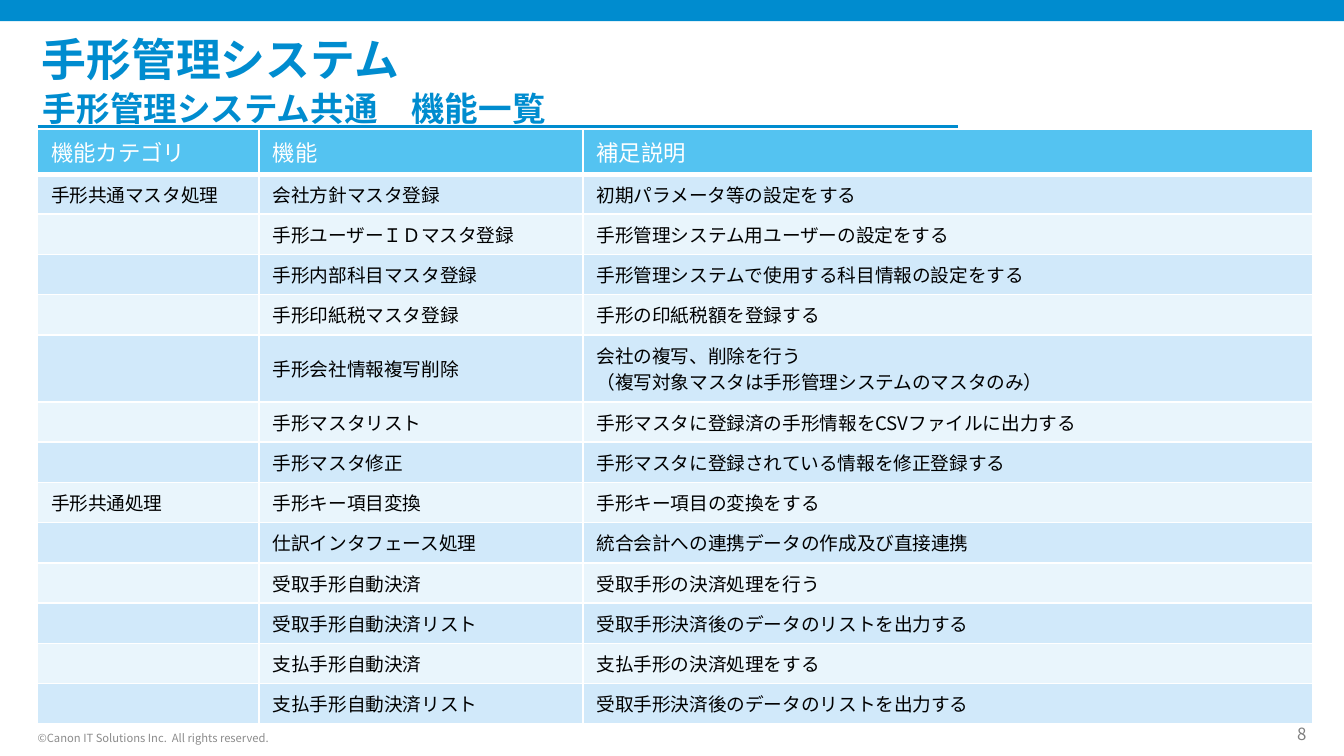
from lxml.etree import SubElement
from pptx import Presentation
from pptx.dml.color import RGBColor
from pptx.enum.shapes import MSO_CONNECTOR as Link, MSO_SHAPE as Shape
from pptx.enum.text import MSO_ANCHOR as Anchor, PP_ALIGN as Align
from pptx.oxml.ns import qn
from pptx.util import Cm, Pt

FONT = "Noto Sans CJK JP"
BLUE = RGBColor(0x00, 0x8C, 0xCF)
SKY = RGBColor(0x54, 0xC3, 0xF1)
PALE = RGBColor(0xD1, 0xE9, 0xFA)
FAINT = RGBColor(0xE9, 0xF5, 0xFC)
GRAY = RGBColor(0x80, 0x80, 0x80)
SILVER = RGBColor(0x8C, 0x8C, 0x8C)
WHITE = RGBColor(0xFF, 0xFF, 0xFF)
BLACK = RGBColor(0x00, 0x00, 0x00)

# text, left, top, width, height, size, colour, bold, anchor, align
LABELS = [
    ("手形管理システム", 0.79, 0.61, 19.99, 0.99, 24, BLUE, True, Anchor.MIDDLE, Align.LEFT),
    ("手形管理システム共通　機能一覧", 0.81, 1.6, 16.49, 0.89, 18, BLUE, True, Anchor.MIDDLE, Align.LEFT),
    ("©Canon IT Solutions Inc.  All rights reserved.", 0.71, 13.69, 5.99, 0.38, 6, SILVER, False,
     Anchor.BOTTOM, Align.LEFT),
    ("8", 23.7, 13.69, 0.99, 0.38, 9, GRAY, False, Anchor.BOTTOM, Align.RIGHT),
]
HEAD = ("機能カテゴリ", "機能", "補足説明")
GROUPS = [
    ("手形共通マスタ処理", [
        ("会社方針マスタ登録", "初期パラメータ等の設定をする"),
        ("手形ユーザーＩＤマスタ登録", "手形管理システム用ユーザーの設定をする"),
        ("手形内部科目マスタ登録", "手形管理システムで使用する科目情報の設定をする"),
        ("手形印紙税マスタ登録", "手形の印紙税額を登録する"),
        ("手形会社情報複写削除", "会社の複写、削除を行う\n（複写対象マスタは手形管理システムのマスタのみ）"),
        ("手形マスタリスト", "手形マスタに登録済の手形情報をCSVファイルに出力する"),
        ("手形マスタ修正", "手形マスタに登録されている情報を修正登録する"),
    ]),
    ("手形共通処理", [
        ("手形キー項目変換", "手形キー項目の変換をする"),
        ("仕訳インタフェース処理", "統合会計への連携データの作成及び直接連携"),
        ("受取手形自動決済", "受取手形の決済処理を行う"),
        ("受取手形自動決済リスト", "受取手形決済後のデータのリストを出力する"),
        ("支払手形自動決済", "支払手形の決済処理をする"),
        ("支払手形自動決済リスト", "受取手形決済後のデータのリストを出力する"),
    ]),
]
COLS = (4.19, 6.12, 13.79)
HEAD_H, ROW_H, TALL_H = 0.85, 0.76, 1.27


def write(frame, text, size, color, bold=False, align=Align.LEFT):
    frame.text = text
    for para in frame.paragraphs:
        para.alignment = align
        for run in para.runs:
            font = run.font
            font.name, font.size, font.bold = FONT, Pt(size), bold
            font.color.rgb = color
            SubElement(font._element, qn("a:ea"), typeface=FONT)
        if not para.runs:  # keeps an empty row from growing
            SubElement(para._p, qn("a:endParaRPr"), sz=str(size * 100))


def edge(cell, bottom):
    """Draw white borders, with the given bottom width in points."""
    props = cell._tc.get_or_add_tcPr()
    for side, width in zip("LRTB", (1, 1, 1, bottom)):
        line = SubElement(props, qn("a:ln" + side), w=str(Pt(width)))
        fill = SubElement(line, qn("a:solidFill"))
        SubElement(fill, qn("a:srgbClr"), val=str(WHITE))


def add_label(slide, text, left, top, width, height, size, color, bold, anchor, align):
    box = slide.shapes.add_textbox(Cm(left), Cm(top), Cm(width), Cm(height))
    frame = box.text_frame
    frame.word_wrap = True
    frame.margin_left = frame.margin_right = frame.margin_top = frame.margin_bottom = 0
    frame.vertical_anchor = anchor
    write(frame, text, size, color, bold, align)


def add_list(slide):
    rows = [HEAD]
    for group, items in GROUPS:
        rows += [(group if i == 0 else "", *item) for i, item in enumerate(items)]
    heights = [HEAD_H] + [TALL_H if "\n" in row[2] else ROW_H for row in rows[1:]]
    table = slide.shapes.add_table(len(rows), len(COLS), Cm(0.71), Cm(2.44),
                                   Cm(sum(COLS)), Cm(sum(heights))).table
    for col, width in zip(table.columns, COLS):
        col.width = Cm(width)
    for r, (row, height) in enumerate(zip(rows, heights)):
        table.rows[r].height = Cm(height)
        for c, text in enumerate(row):
            cell = table.cell(r, c)
            edge(cell, 1 if r else 3)
            cell.fill.solid()
            cell.fill.fore_color.rgb = (PALE if r % 2 else FAINT) if r else SKY
            middle = height == TALL_H and c == 1
            cell.vertical_anchor = Anchor.MIDDLE if middle else Anchor.BOTTOM
            write(cell.text_frame, text, 10 if r else 12, BLACK if r else WHITE)


def main():
    deck = Presentation()
    deck.slide_width, deck.slide_height = Cm(25.4), Cm(14.29)
    slide = deck.slides.add_slide(deck.slide_layouts[6])

    band = slide.shapes.add_shape(Shape.RECTANGLE, 0, 0, deck.slide_width, Cm(0.4))
    band.shadow.inherit = False
    band.fill.solid()
    band.fill.fore_color.rgb = BLUE
    band.line.fill.background()

    rule = slide.shapes.add_connector(Link.STRAIGHT, Cm(0.71), Cm(2.39), Cm(18.11), Cm(2.39))
    rule.line.color.rgb = BLUE
    rule.line.width = Pt(2)
    SubElement(rule._element.spPr, qn("a:effectLst"))

    for label in LABELS:
        add_label(slide, *label)
    add_list(slide)
    deck.save("out.pptx")


if __name__ == "__main__":
    main()
